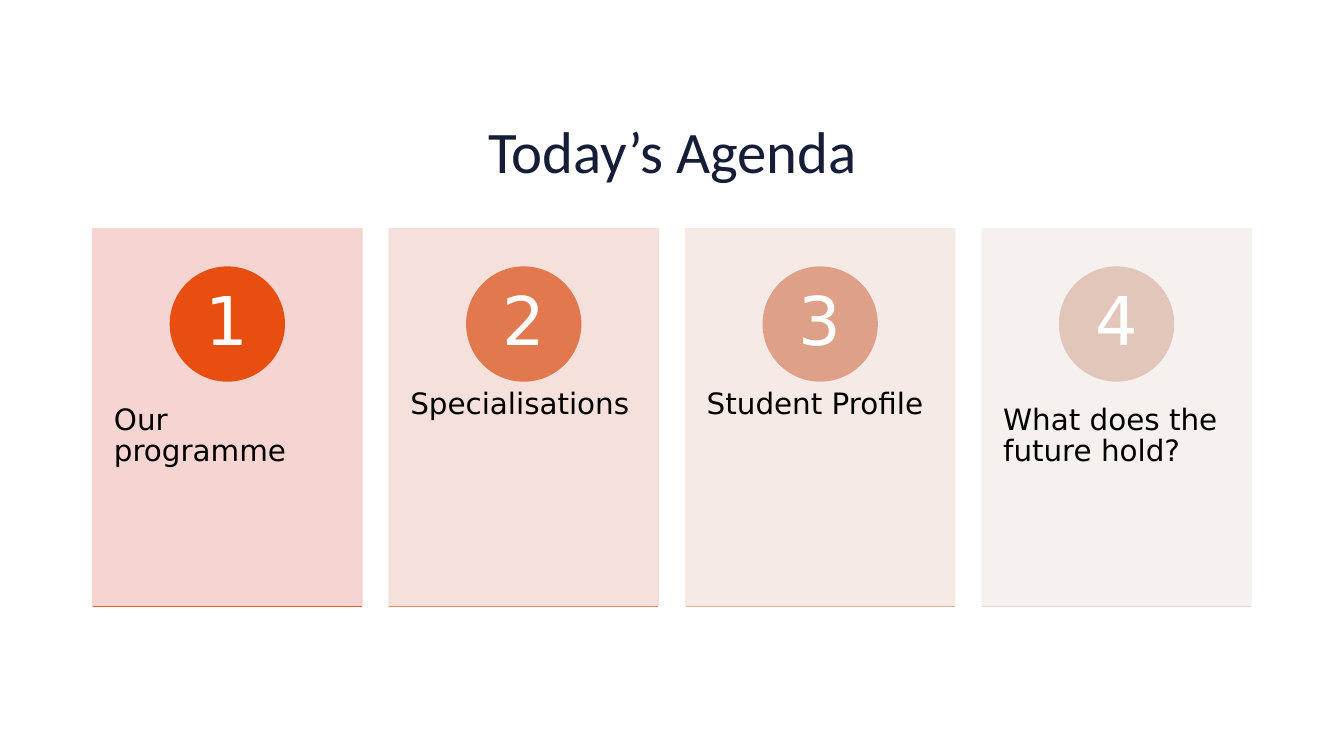
"""Builds the agenda slide with four numbered cards."""
from lxml import etree
from pptx import Presentation
from pptx import util as u
from pptx.dml.color import RGBColor
from pptx.enum import shapes, text
from pptx.oxml import ns

NAVY = RGBColor(0x15, 0x1D, 0x37)
BLACK = RGBColor(0, 0, 0)
WHITE = RGBColor(0xFF, 0xFF, 0xFF)
PINK = RGBColor(0xF6, 0xD0, 0xCC)
ROSE = RGBColor(0xF5, 0xDD, 0xD9)
BLUSH = RGBColor(0xF5, 0xE8, 0xE4)
PEARL = RGBColor(0xF6, 0xF0, 0xEE)
ORANGE = RGBColor(0xE8, 0x4E, 0x10)
CORAL = RGBColor(0xE2, 0x78, 0x4D)
SALMON = RGBColor(0xDE, 0xA1, 0x88)
SAND = RGBColor(0xE3, 0xC6, 0xBA)
ORANGE_RULE = RGBColor(0xE7, 0x62, 0x2C)
CORAL_RULE = RGBColor(0xDF, 0x8D, 0x6B)
SALMON_RULE = RGBColor(0xDF, 0xB4, 0xA2)
SAND_RULE = RGBColor(0xE8, 0xD7, 0xD0)

AGENDA = [
    ("Our programme", PINK, ORANGE, ORANGE_RULE),
    ("Specialisations", ROSE, CORAL, CORAL_RULE),
    ("Student Profile", BLUSH, SALMON, SALMON_RULE),
    ("What does the future hold?", PEARL, SAND, SAND_RULE),
]

LEFT, TOP, PITCH = 0.92, 2.27, 2.94
CARD_WIDTH, CARD_HEIGHT = 2.67, 3.74
CIRCLE = 1.13
LABEL_TOP, LABEL_HEIGHT = 3.7, 2.25
RULE_TOP = 6.02

CENTRE = text.PP_ALIGN.CENTER
MIDDLE = text.MSO_ANCHOR.MIDDLE


def apply(target, values):
    for name, value in values.items():
        setattr(target, name, value)


def write(shape, words, font, size, colour, align, frame):
    shape.text_frame.text = words
    apply(shape.text_frame, {"word_wrap": True, **frame})
    para = shape.text_frame.paragraphs[0]
    apply(para, {"alignment": align, "line_spacing": 0.9})
    apply(para.font, {"name": font, "size": u.Pt(size)})
    para.font.color.rgb = colour


def add_filled(group, kind, left, top, width, height, colour):
    shape = group.shapes.add_shape(kind, *map(u.Inches, (left, top, width, height)))
    shape.shadow.inherit = False
    shape.fill.solid()
    shape.fill.fore_color.rgb = colour
    shape.line.color.rgb = colour
    shape.line.width = u.Pt(1)
    return shape


def make_translucent(shape, percent):
    for colour in shape.element.spPr.iter(ns.qn("a:srgbClr")):
        etree.SubElement(colour, ns.qn("a:alpha"), val=str(percent * 1000))


def add_rule(group, left, colour):
    rule = group.shapes.add_connector(
        shapes.MSO_CONNECTOR.STRAIGHT,
        *map(u.Inches, (left, RULE_TOP, left + CARD_WIDTH, RULE_TOP)))
    rule.line.color.rgb = colour
    rule.line.width = u.Pt(1)
    etree.SubElement(rule.element.spPr, ns.qn("a:effectLst"))


def add_card(group, number, label, panel_colour, circle_colour, rule_colour):
    left = LEFT + (number - 1) * PITCH
    panel = add_filled(group, shapes.MSO_SHAPE.RECTANGLE, left, TOP,
                       CARD_WIDTH, CARD_HEIGHT, panel_colour)
    make_translucent(panel, 90)

    box = group.shapes.add_textbox(
        *map(u.Inches, (left, LABEL_TOP, CARD_WIDTH, LABEL_HEIGHT)))
    side, end = u.Inches(0.21), u.Inches(0.36)
    write(box, label, "DejaVu Sans", 21, BLACK, text.PP_ALIGN.LEFT,
          {"margin_left": side, "margin_right": side,
           "margin_top": end, "margin_bottom": end})

    circle = add_filled(group, shapes.MSO_SHAPE.OVAL,
                        left + (CARD_WIDTH - CIRCLE) / 2, 2.65,
                        CIRCLE, CIRCLE, circle_colour)
    side, end = u.Inches(0.09), u.Inches(0.01)
    write(circle, str(number), "DejaVu Sans", 48, WHITE, CENTRE,
          {"vertical_anchor": MIDDLE, "margin_left": side, "margin_right": side,
           "margin_top": end, "margin_bottom": end})
    add_rule(group, left, rule_colour)


def add_title(page, words):
    title = page.shapes.title
    apply(title, {"left": u.Inches(0.92), "top": u.Inches(0.81),
                  "width": u.Inches(11.5), "height": u.Inches(1.45)})
    write(title, words, "Calibri", 42, NAVY, CENTRE, {"vertical_anchor": MIDDLE})


def main():
    deck = Presentation()
    apply(deck, {"slide_width": u.Inches(13.33), "slide_height": u.Inches(7.5)})
    page = deck.slides.add_slide(deck.slide_layouts.get_by_name("Title Only"))
    add_title(page, "Today’s Agenda")
    cards = page.shapes.add_group_shape()
    for number, topic in enumerate(AGENDA, 1):
        add_card(cards, number, *topic)
    deck.save("out.pptx")


if __name__ == "__main__":
    main()
